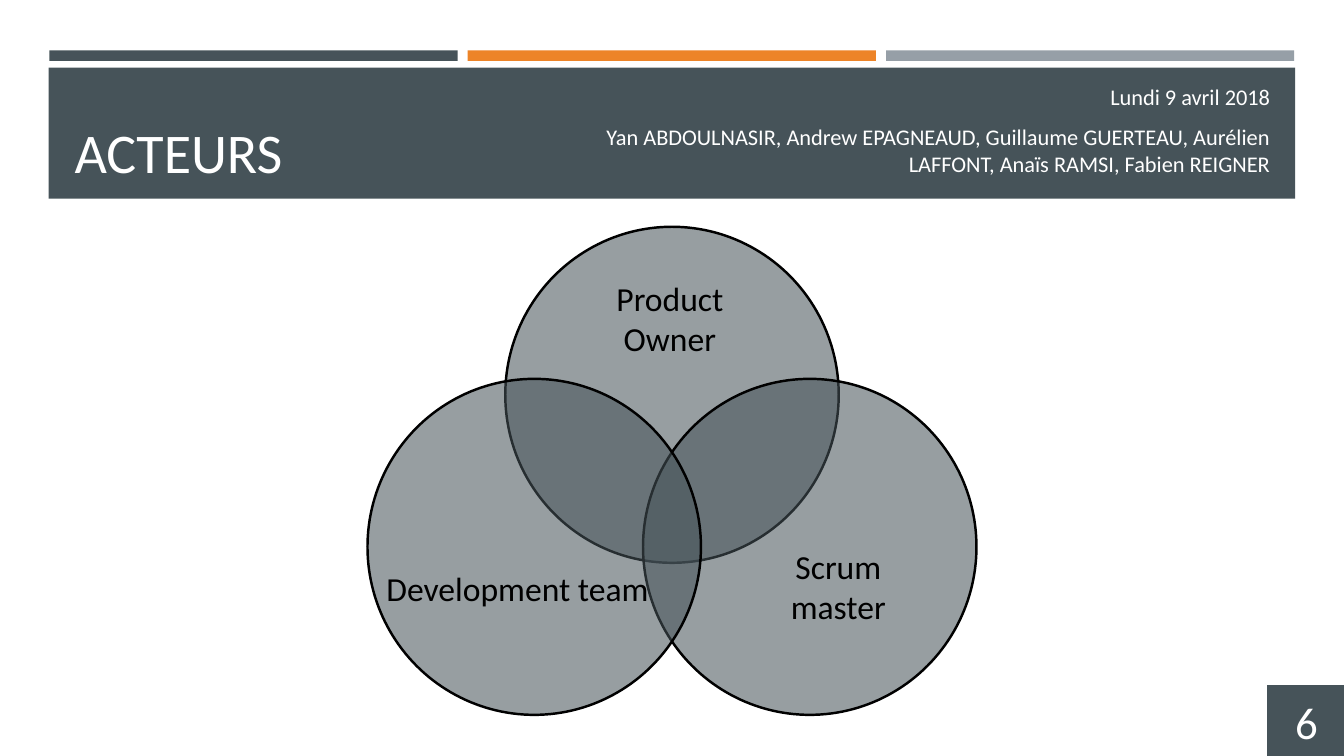
from dataclasses import dataclass

import pptx
import pptx.dml.color
import pptx.enum.shapes
import pptx.enum.text
import pptx.oxml.ns
import pptx.util
from lxml import etree

SHAPE = pptx.enum.shapes.MSO_SHAPE
ALIGN = pptx.enum.text.PP_ALIGN
ANCHOR = pptx.enum.text.MSO_ANCHOR
FIT = pptx.enum.text.MSO_AUTO_SIZE

COLORS = {
    "slate": "465359",
    "orange": "ED8428",
    "gray": "969FA7",
    "white": "FFFFFF",
    "black": "000000",
}
FONT = "Calibri"

# Grid of 160 columns by 90 rows, with square cells
COLS, ROWS = 160, 90
CELL = pptx.util.Inches(7.5) / ROWS


@dataclass
class Box:
    col: float
    row: float
    cols: float
    rows: float

    def emu(self) -> list[int]:
        return [round(n * CELL) for n in (self.col, self.row, self.cols, self.rows)]


@dataclass
class Label:
    box: Box
    text: str
    size: int
    color: str = "black"
    align: ALIGN = ALIGN.CENTER
    anchor: ANCHOR = ANCHOR.TOP
    fit: FIT = FIT.SHAPE_TO_FIT_TEXT
    before: float = 0
    after: float = 0


def rgb(name: str) -> pptx.dml.color.RGBColor:
    return pptx.dml.color.RGBColor.from_string(COLORS[name])


def add_shape(s, kind, box: Box, fill: str, line: str = "", alpha: int = 100):
    sp = s.shapes.add_shape(kind, *box.emu())
    sp.shadow.inherit = False
    sp.fill.solid()
    sp.fill.fore_color.rgb = rgb(fill)
    if alpha < 100:
        clr = sp.fill._xPr.find(".//" + pptx.oxml.ns.qn("a:srgbClr"))
        etree.SubElement(clr, pptx.oxml.ns.qn("a:alpha"), val=str(alpha * 1000))
    if line:
        sp.line.color.rgb = rgb(line)
        sp.line.width = pptx.util.Pt(1.75)
    else:
        sp.line.fill.background()
    return sp


def write(sp, label: Label) -> None:
    tf = sp.text_frame
    tf.text = label.text
    tf.word_wrap = True
    tf.auto_size = label.fit
    tf.vertical_anchor = label.anchor
    for p in tf.paragraphs:
        p.alignment = label.align
        p.space_before = pptx.util.Pt(label.before)
        p.space_after = pptx.util.Pt(label.after)
        for r in p.runs:
            r.font.name = FONT
            r.font.size = pptx.util.Pt(label.size)
            r.font.color.rgb = rgb(label.color)


def main() -> None:
    prs = pptx.Presentation()
    prs.slide_width = round(COLS * CELL)
    prs.slide_height = round(ROWS * CELL)
    s = prs.slides.add_slide(prs.slide_layouts[6])

    # Colour bars and header band
    for i, color in enumerate(("slate", "orange", "gray")):
        add_shape(s, SHAPE.RECTANGLE, Box(5.88 + 49.8 * i, 6, 48.6, 1.25), color)
    add_shape(s, SHAPE.RECTANGLE, Box(5.8, 8.06, 148.4, 15.6), "slate")

    # Three overlapping circles: one on top, then right and left
    width, height, shift = 39.7, 40, 16.4
    for dx, row in ((0, 27), (shift, 45.1), (-shift, 45.1)):
        box = Box((COLS - width) / 2 + dx, row, width, height)
        add_shape(s, SHAPE.OVAL, box, "slate", "black", alpha=56)

    # Title, authors and circle names
    labels = [
        Label(Box(7.7, 9.24, 144.7, 13.3), "ACTEURS", 40, "white",
              ALIGN.LEFT, ANCHOR.BOTTOM, FIT.NONE),
        Label(Box(69.7, 9.24, 82.7, 12.5),
              "Lundi 9 avril 2018\n"
              "Yan ABDOULNASIR, Andrew EPAGNEAUD, Guillaume GUERTEAU, "
              "Aurélien LAFFONT, Anaïs RAMSI, Fabien REIGNER",
              16, "white", ALIGN.RIGHT, ANCHOR.MIDDLE, FIT.NONE, 3.2, 6),
        Label(Box(42.1, 67, 39, 10.9), "Development team", 24),
        Label(Box(67.1, 32.5, 25.3, 10.9), "Product Owner", 24),
        Label(Box(89.3, 64.4, 21, 10.9), "Scrum\nmaster", 24),
    ]
    for label in labels:
        write(s.shapes.add_textbox(*label.box.emu()), label)

    # Slide number
    number = Label(Box(150.7, 81.4, 9.7, 9.1), "6", 32, "white",
                   anchor=ANCHOR.MIDDLE, fit=FIT.NONE)
    write(add_shape(s, SHAPE.RECTANGLE, number.box, "slate", "white"), number)

    prs.save("out.pptx")


if __name__ == "__main__":
    main()
